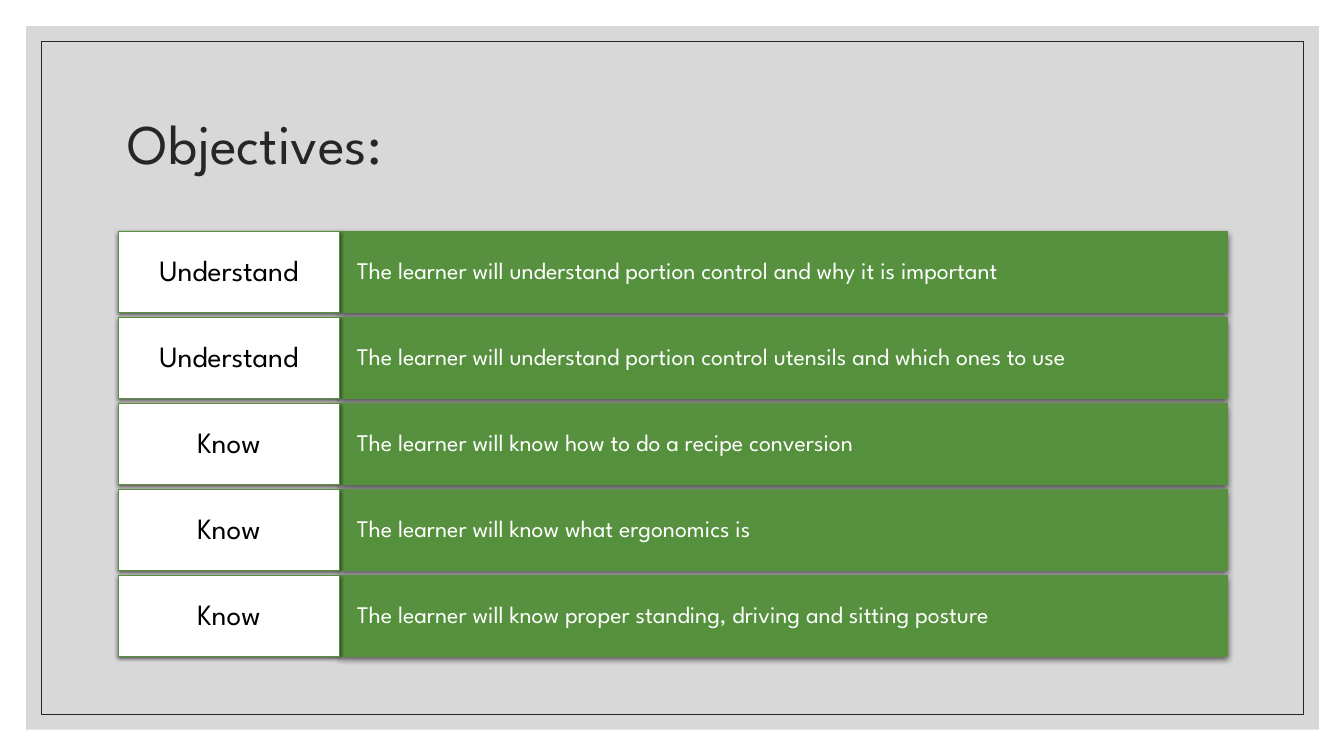
from lxml import etree
from pptx import Presentation
from pptx.dml.color import RGBColor
from pptx.enum.shapes import MSO_SHAPE
from pptx.enum.text import MSO_ANCHOR, PP_ALIGN
from pptx.oxml.ns import qn
from pptx.util import Inches, Pt

RECTANGLE = MSO_SHAPE.RECTANGLE
MIDDLE = MSO_ANCHOR.MIDDLE
LEFT, CENTER = PP_ALIGN.LEFT, PP_ALIGN.CENTER

TITLE = "Objectives:"
OBJECTIVES = [
    ("Understand", "The learner will understand portion control and why it is important"),
    ("Understand", "The learner will understand portion control utensils and which ones to use"),
    ("Know", "The learner will know how to do a recipe conversion"),
    ("Know", "The learner will know what ergonomics is"),
    ("Know", "The learner will know proper standing, driving and sitting posture"),
]

WHITE = RGBColor(0xFF, 0xFF, 0xFF)
BLACK = RGBColor(0, 0, 0)
INK = RGBColor(0x26, 0x26, 0x26)
GRAY = RGBColor(0xBF, 0xBF, 0xBF)
GREEN = RGBColor(0x57, 0x90, 0x3F)
GREEN_END = RGBColor(0x55, 0x91, 0x3C)

FONT = "League Spartan"
TITLE_FONT = {"name": FONT, "size": Pt(40), "color": INK}
VERB_FONT = {"name": FONT, "size": Pt(21), "color": BLACK}
GOAL_FONT = {"name": FONT, "size": Pt(17), "color": WHITE}

ROWS_LEFT, VERB_WIDTH, GOAL_WIDTH = 1.17, 2.2, 8.8
FIRST_TOP, LAST_TOP, ROW_HEIGHT = 2.3, 5.71, 0.8
ROW_PITCH = (LAST_TOP - FIRST_TOP) / (len(OBJECTIVES) - 1)


def add_rectangle(slide, box, line_color=None):
    rectangle = slide.shapes.add_shape(RECTANGLE, *map(Inches, box))
    rectangle.shadow.inherit = False
    if line_color is None:
        rectangle.line.fill.background()
    else:
        rectangle.line.color.rgb = line_color
        rectangle.line.width = Pt(0.5)
    return rectangle


def cast_shadow(shape, blur, distance):
    effects = shape._element.spPr.find(qn("a:effectLst"))
    outer = etree.SubElement(
        effects, qn("a:outerShdw"), blurRad=str(Pt(blur)), dist=str(Pt(distance)),
        dir="5400000", algn="ctr", rotWithShape="0")
    color = etree.SubElement(outer, qn("a:srgbClr"), val="000000")
    etree.SubElement(color, qn("a:alpha"), val="63000")


def write(shape, text, font_format, align=LEFT, inset_x=0.1, inset_y=0.05):
    frame = shape.text_frame
    frame_format = {
        "word_wrap": True, "vertical_anchor": MIDDLE,
        "margin_left": Inches(inset_x), "margin_right": Inches(inset_x),
        "margin_top": Inches(inset_y), "margin_bottom": Inches(inset_y),
    }
    for key, value in frame_format.items():
        setattr(frame, key, value)
    paragraph = frame.paragraphs[0]
    paragraph.alignment = align
    paragraph.line_spacing = 0.9
    run = paragraph.add_run()
    run.text = text
    for key, value in font_format.items():
        if key == "color":
            run.font.color.rgb = value
        else:
            setattr(run.font, key, value)


def add_objective(slide, top, verb, goal):
    goal_bar = add_rectangle(
        slide, (ROWS_LEFT + VERB_WIDTH, top, GOAL_WIDTH, ROW_HEIGHT), GREEN)
    goal_bar.fill.gradient()
    goal_bar.fill.gradient_angle = 270
    for stop, color in zip(goal_bar.fill.gradient_stops, (GREEN, GREEN_END)):
        stop.color.rgb = color
    cast_shadow(goal_bar, 4.5, 1.5)
    write(goal_bar, goal, GOAL_FONT, LEFT, 0.17, 0.2)

    verb_box = add_rectangle(slide, (ROWS_LEFT, top, VERB_WIDTH, ROW_HEIGHT), GREEN)
    verb_box.fill.solid()
    verb_box.fill.fore_color.rgb = WHITE
    cast_shadow(verb_box, 3, 1)
    write(verb_box, verb, VERB_FONT, CENTER, 0.12, 0.08)


def main():
    deck = Presentation()
    deck.slide_width, deck.slide_height = Inches(13.33), Inches(7.5)
    slide = deck.slides.add_slide(deck.slide_layouts[6])
    slide.background.fill.solid()
    slide.background.fill.fore_color.rgb = WHITE

    panel = add_rectangle(slide, (0.26, 0.26, 12.82, 6.98))
    panel.fill.solid()
    panel.fill.fore_color.rgb = GRAY
    panel_color = panel._element.spPr.find(qn("a:solidFill")).find(qn("a:srgbClr"))
    etree.SubElement(panel_color, qn("a:alpha"), val="60000")

    border = add_rectangle(slide, (0.41, 0.41, 12.52, 6.68), INK)
    border.fill.background()

    title = slide.shapes.add_textbox(*map(Inches, (ROWS_LEFT, 0.7, 11, 1.5)))
    write(title, TITLE, TITLE_FONT)

    for row, (verb, goal) in enumerate(OBJECTIVES):
        add_objective(slide, FIRST_TOP + row * ROW_PITCH, verb, goal)

    deck.save("out.pptx")


if __name__ == "__main__":
    main()
